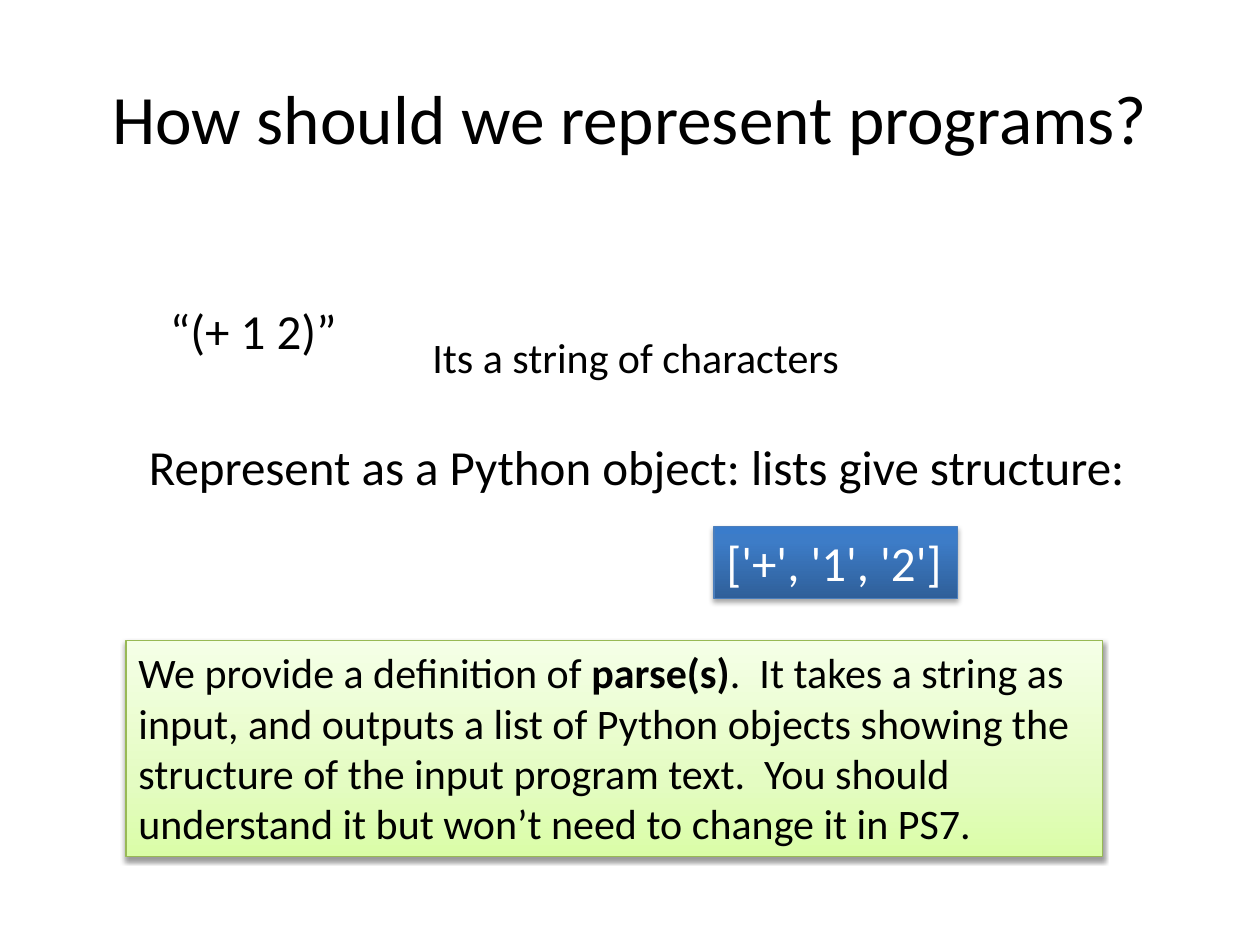
from lxml import etree
from pptx import Presentation
from pptx.dml.color import RGBColor
from pptx.enum import shapes, text
from pptx.oxml.ns import qn
from pptx.util import Pt

FONT = "Calibri"
BLACK, WHITE = "000000", "FFFFFF"


def color(hex_code):
    return RGBColor.from_string(hex_code)


def write(shape, runs, size, ink=BLACK, wrap=False):
    """Fill a shape with one paragraph of (text, bold) runs."""
    frame = shape.text_frame
    frame.word_wrap = wrap
    frame.auto_size = text.MSO_AUTO_SIZE.SHAPE_TO_FIT_TEXT
    frame.vertical_anchor = text.MSO_ANCHOR.TOP
    paragraph = frame.paragraphs[0]
    paragraph.alignment = text.PP_ALIGN.LEFT
    paragraph.font.name = FONT
    paragraph.font.size = Pt(size)
    paragraph.font.color.rgb = color(ink)
    for wording, bold in runs:
        run = paragraph.add_run()
        run.text = wording
        if bold:
            run.font.bold = True
    return frame, paragraph


def add_label(slide, box, wording, size):
    label = slide.shapes.add_textbox(*map(Pt, box))
    return write(label, [(wording, False)], size)


def add_title(slide, box, wording):
    frame, paragraph = add_label(slide, box, wording, 39.6)
    frame.word_wrap = True
    frame.auto_size = text.MSO_AUTO_SIZE.NONE
    frame.vertical_anchor = text.MSO_ANCHOR.MIDDLE
    paragraph.alignment = text.PP_ALIGN.CENTER


def set_gradient(shape, stops):
    """Shade from bottom to top through (percent, colour) stops."""
    shape.fill.gradient()
    shape.fill.gradient_angle = 90
    stop_list = shape._element.spPr.find(qn("a:gradFill")).find(qn("a:gsLst"))
    for old_stop in list(stop_list):
        stop_list.remove(old_stop)
    for percent, hex_code in stops:
        stop = etree.SubElement(stop_list, qn("a:gs"), pos=str(percent * 1000))
        etree.SubElement(stop, qn("a:srgbClr"), val=hex_code)


def set_shadow(shape, opacity, distance):
    """Cast a soft black shadow straight down."""
    shape.shadow.inherit = False
    effects = shape._element.spPr.find(qn("a:effectLst"))
    shadow = etree.SubElement(
        effects, qn("a:outerShdw"), blurRad=str(Pt(3.1)), dist=str(Pt(distance)),
        dir="5400000", rotWithShape="0")
    tint = etree.SubElement(shadow, qn("a:srgbClr"), val=BLACK)
    etree.SubElement(tint, qn("a:alpha"), val=str(opacity * 1000))


def add_panel(slide, box, stops, border, opacity, distance):
    panel = slide.shapes.add_shape(shapes.MSO_SHAPE.RECTANGLE, *map(Pt, box))
    set_gradient(panel, stops)
    panel.line.color.rgb = color(border)
    panel.line.width = Pt(0.75)
    set_shadow(panel, opacity, distance)
    return panel


def add_list_example(slide, box):
    stops = [(0, "2F5F99"), (80, "3D7CC7"), (100, "3A7CCB")]
    example = add_panel(slide, box, stops, "4B7EBC", 35, 1.8)
    write(example, [("['+', '1', '2']", False)], 28, ink=WHITE)


def add_parse_note(slide, box):
    stops = [(0, "DAFDA7"), (35, "E4FCC2"), (100, "F5FFE7")]
    note = add_panel(slide, box, stops, "98B955", 38, 1.6)
    write(note, [
        ("We provide a definition of ", False),
        ("parse(s)", True),
        (".  It takes a string as input, and outputs a list of Python objects "
         "showing the structure of the input program text.  You should "
         "understand it but won’t need to change it in PS7.", False),
    ], 24, wrap=True)


def main():
    deck = Presentation()
    deck.slide_width, deck.slide_height = Pt(720), Pt(540)
    slide = deck.slides.add_slide(deck.slide_layouts[6])

    # Question
    add_title(slide, (36, 21.6, 648, 90), "How should we represent programs?")

    # Program as a string
    add_label(slide, (90, 168, 110.8, 41.2), "“(+ 1 2)”", 28)
    add_label(slide, (240, 186, 249, 36.35), "Its a string of characters", 24)

    # Program as a list
    add_list_example(slide, (408, 301, 139, 41.2))
    add_label(slide, (78, 246, 579, 41.2),
              "Represent as a Python object: lists give structure:", 28)

    # What the parser does
    add_parse_note(slide, (72, 366, 558, 123.6))

    deck.save("out.pptx")


if __name__ == "__main__":
    main()
